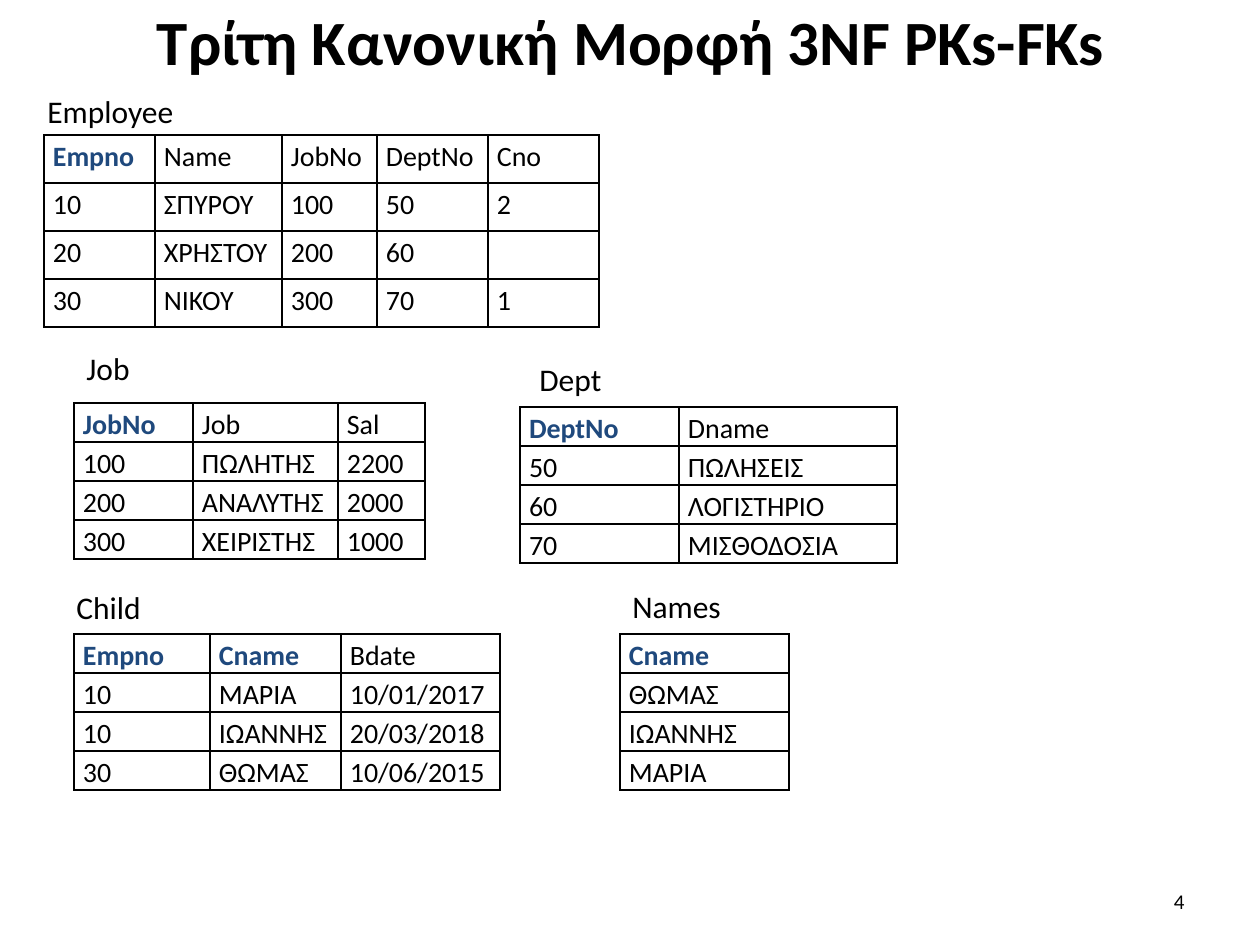
"""Build the slide showing third normal form tables with their keys."""
from dataclasses import dataclass

from lxml import etree
from pptx import Presentation
from pptx.dml.color import RGBColor
from pptx.enum.text import MSO_ANCHOR, MSO_AUTO_SIZE, PP_ALIGN
from pptx.oxml.ns import qn
from pptx.util import Emu, Pt

MIDDLE = MSO_ANCHOR.MIDDLE
NO_AUTOFIT = MSO_AUTO_SIZE.NONE
CENTER, LEFT, RIGHT = PP_ALIGN.CENTER, PP_ALIGN.LEFT, PP_ALIGN.RIGHT
BORDER_SIDES = ("a:lnL", "a:lnR", "a:lnT", "a:lnB")
EMU_PER_PX = 914400 / 126


@dataclass(frozen=True)
class Theme:
    font: str = "Calibri"
    ink: str = "000000"
    key: str = "1F497D"
    title: int = 36
    label: int = 18
    cell: int = 16
    number: int = 12
    border: int = 1
    line_spacing: float = 1.15


THEME = Theme()


def px(length):
    return Emu(round(length * EMU_PER_PX))


def style(paragraph, size, color=THEME.ink, bold=False, align=LEFT):
    paragraph.alignment = align
    for run in paragraph.runs:
        run.font.name = THEME.font
        run.font.size = Pt(size)
        run.font.bold = bold
        run.font.color.rgb = RGBColor.from_string(color)


# name, label box, table left and top, column widths, row height, key count, rows
RELATIONS = [
    ("Employee", (35, 86, 152, 50), (44, 135), (111, 127, 95, 111, 111), 48, 1, [
        ("Empno", "Name", "JobNo", "DeptNo", "Cno"),
        ("10", "ΣΠΥΡΟΥ", "100", "50", "2"),
        ("20", "ΧΡΗΣΤΟΥ", "200", "60", ""),
        ("30", "ΝΙΚΟΥ", "300", "70", "1"),
    ]),
    ("Job", (74, 343, 69, 50), (74, 403), (119, 145, 87), 39, 1, [
        ("JobNo", "Job", "Sal"),
        ("100", "ΠΩΛΗΤΗΣ", "2200"),
        ("200", "ΑΝΑΛΥΤΗΣ", "2000"),
        ("300", "ΧΕΙΡΙΣΤΗΣ", "1000"),
    ]),
    ("Dept", (527, 354, 90, 50), (520, 407), (159, 218), 39, 1, [
        ("DeptNo", "Dname"),
        ("50", "ΠΩΛΗΣΕΙΣ"),
        ("60", "ΛΟΓΙΣΤΗΡΙΟ"),
        ("70", "ΜΙΣΘΟΔΟΣΙΑ"),
    ]),
    ("Child", (64, 582, 91, 50), (74, 634), (136, 131, 159), 39, 2, [
        ("Empno", "Cname", "Bdate"),
        ("10", "ΜΑΡΙΑ", "10/01/2017"),
        ("10", "ΙΩΑΝΝΗΣ", "20/03/2018"),
        ("30", "ΘΩΜΑΣ", "10/06/2015"),
    ]),
    ("Names", (620, 581, 115, 50), (620, 634), (169,), 39, 1, [
        ("Cname",),
        ("ΘΩΜΑΣ",),
        ("ΙΩΑΝΝΗΣ",),
        ("ΜΑΡΙΑ",),
    ]),
]

prs = Presentation()
prs.slide_width, prs.slide_height = px(1260), px(945)
slide = prs.slides.add_slide(prs.slide_layouts[5])

title = slide.shapes.title
title.left, title.top, title.width, title.height = map(px, (64, 16, 1134, 125))
title_frame = title.text_frame
title_frame.text = "Τρίτη Κανονική Μορφή 3NF PKs-FKs"
title_frame.auto_size = NO_AUTOFIT
title_frame.vertical_anchor = MIDDLE
title_frame.margin_top, title_frame.margin_bottom = px(0), px(76)
style(title_frame.paragraphs[0], THEME.title, bold=True, align=CENTER)

page_number = slide.shapes.add_textbox(*map(px, (903, 876, 294, 50))).text_frame
page_number.text = "4"
page_number.word_wrap = True
page_number.vertical_anchor = MIDDLE
style(page_number.paragraphs[0], THEME.number, align=RIGHT)

for name, label_box, (left, top), widths, row_height, key_count, rows in RELATIONS:
    label = slide.shapes.add_textbox(*map(px, label_box)).text_frame
    label.text = name
    label.word_wrap = False
    style(label.paragraphs[0], THEME.label)

    relation = slide.shapes.add_table(
        len(rows), len(widths), px(left), px(top),
        px(sum(widths)), px(row_height * len(rows))).table
    relation.first_row = relation.horz_banding = False
    for column, width in zip(relation.columns, widths):
        column.width = px(width)
    for row_index, row in enumerate(rows):
        relation.rows[row_index].height = px(row_height)
        for column_index, value in enumerate(row):
            cell = relation.cell(row_index, column_index)
            cell.fill.background()
            cell.margin_left = cell.margin_right = px(9)
            cell.margin_top = cell.margin_bottom = px(0)
            cell.text_frame.text = value
            entry = cell.text_frame.paragraphs[0]
            entry.line_spacing = THEME.line_spacing
            is_key = row_index == 0 and column_index < key_count
            style(entry, THEME.cell, THEME.key if is_key else THEME.ink, is_key)

            properties = cell._tc.get_or_add_tcPr()
            for position, side in enumerate(BORDER_SIDES):
                border = etree.Element(qn(side), w=str(Pt(THEME.border)))
                fill = etree.SubElement(border, qn("a:solidFill"))
                etree.SubElement(fill, qn("a:srgbClr"), val=THEME.ink)
                properties.insert(position, border)

prs.save("out.pptx")
